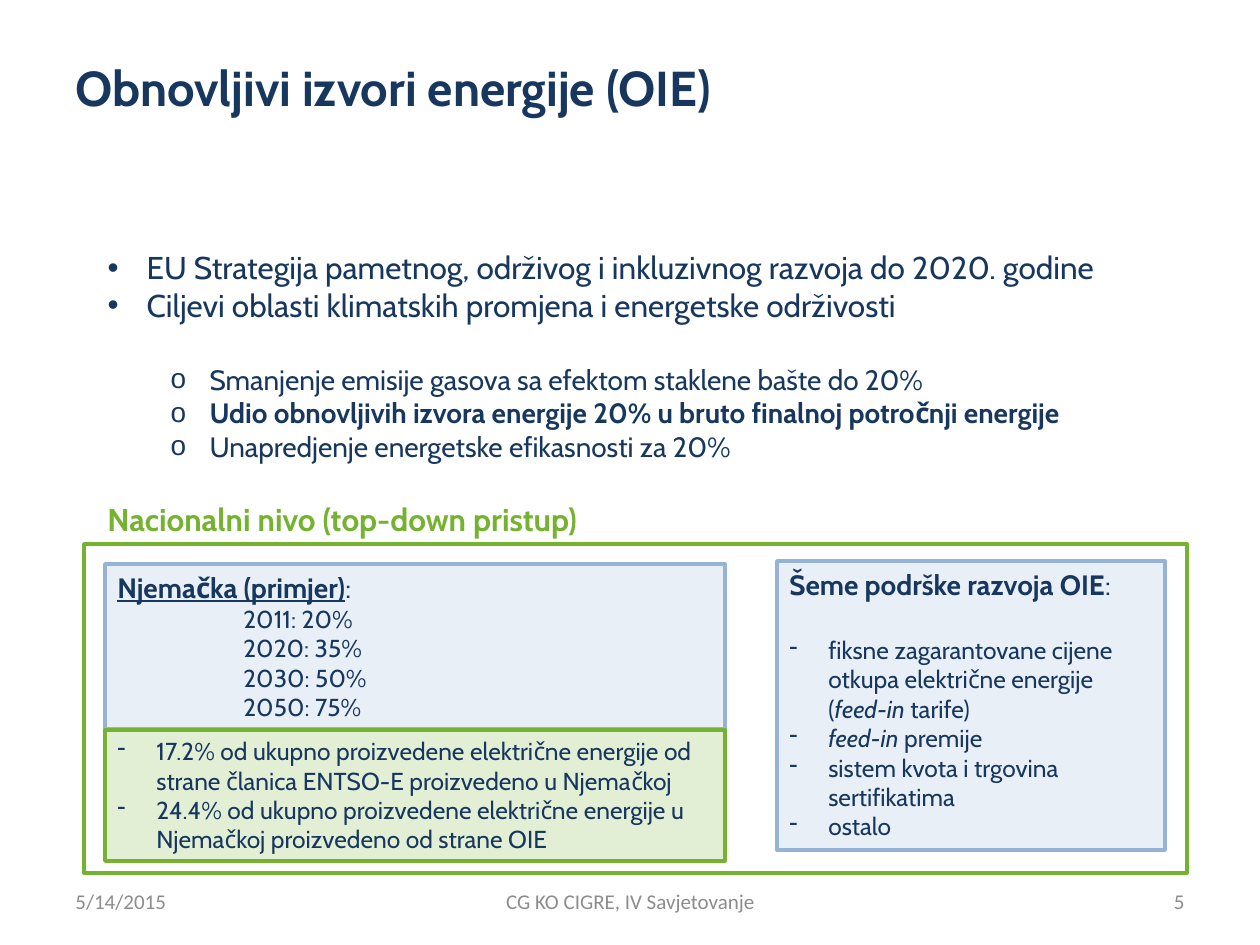
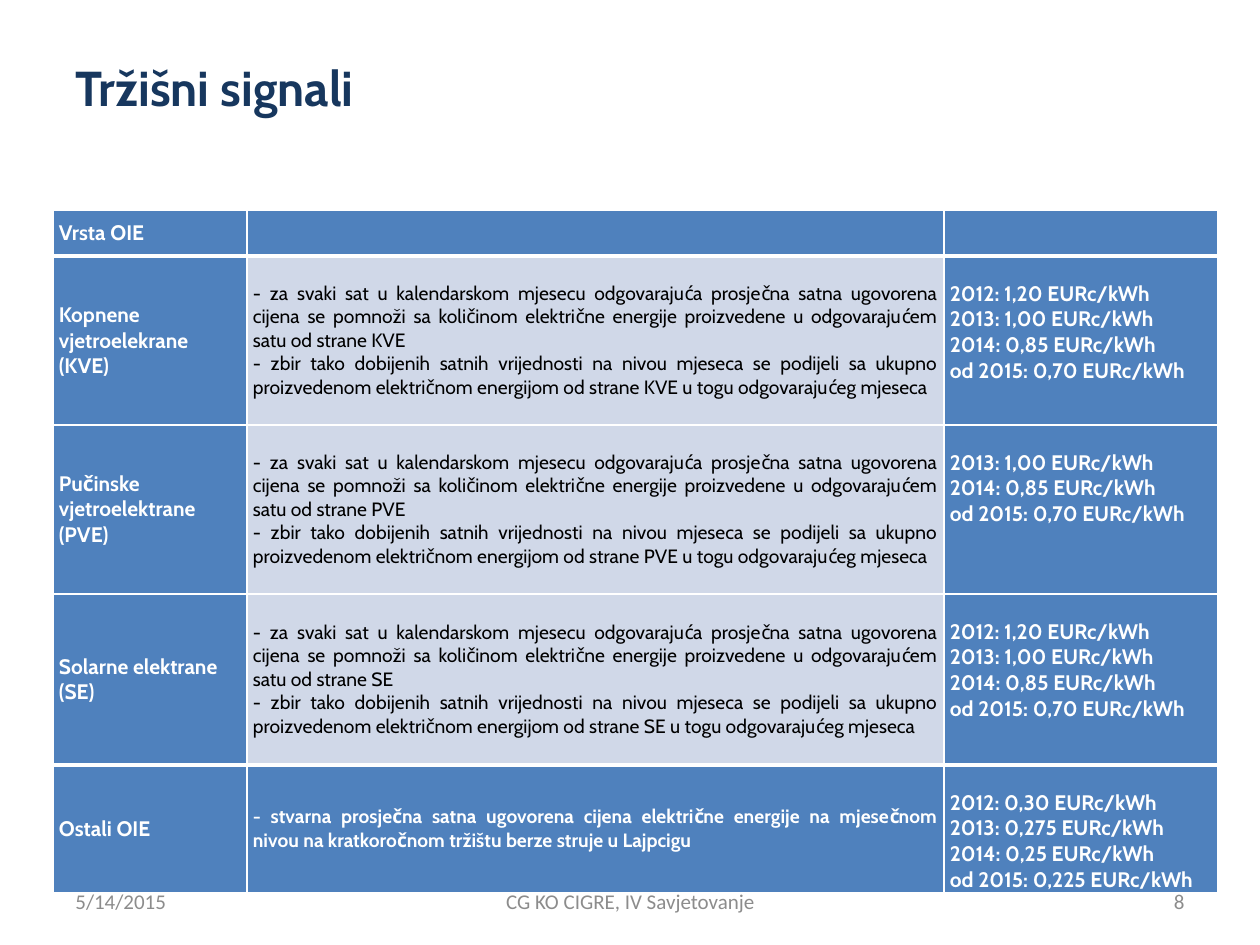
import dataclasses

import lxml.etree
import pptx
import pptx.dml.color
import pptx.enum.shapes
import pptx.enum.text
import pptx.oxml.ns
import pptx.util

ALIGN = pptx.enum.text.PP_ALIGN
ANCHOR = pptx.enum.text.MSO_ANCHOR
qn = pptx.oxml.ns.qn


@dataclasses.dataclass(frozen=True)
class Theme:
    """Colours, fonts and type sizes of the deck."""
    navy: str = "17375E"
    green: str = "74B230"
    sky: str = "95B3D7"
    blue: str = "4F81BD"
    pale: str = "D0D8E8"
    white: str = "FFFFFF"
    black: str = "000000"
    grey: str = "8C8C8C"
    font: str = "Cabin"
    footer_font: str = "Calibri"
    title: int = 28
    lead: int = 18
    sub: int = 16
    detail: int = 14
    small: int = 12
    tiny: int = 11


THEME = Theme()
HANG = 39


def px(length):
    """Turn a length in px into EMU."""
    return pptx.util.Emu(round(length * 914400 / 126))


def within(box, left, top, width, height):
    """Shift a box by the corner of the box that holds it."""
    return box[0] + left, box[1] + top, width, height


def rgb(color):
    """Turn a hex string into a colour."""
    return pptx.dml.color.RGBColor.from_string(color)


def write(frame, text, size=THEME.detail, color=THEME.navy, font=THEME.font, bold=False,
          align=ALIGN.LEFT, bullet=None, indent=0, before=0, level=0):
    """Add a paragraph of plain text or of (text, font settings) runs."""
    first = frame.paragraphs[0]
    paragraph = frame.add_paragraph() if first.runs else first
    paragraph.level = level
    paragraph.alignment = align
    paragraph.space_before = pptx.util.Pt(before)
    properties = paragraph._p.get_or_add_pPr()
    properties.set("marL", str(px(indent)))
    properties.set("indent", str(-px(HANG) if bullet else 0))
    if bullet:
        lxml.etree.SubElement(properties, qn("a:buChar"), char=bullet)
    for words, settings in [(text, {})] if isinstance(text, str) else text:
        run = paragraph.add_run()
        run.text = words
        run.font.name = font
        run.font.size = pptx.util.Pt(size)
        run.font.bold = bold
        run.font.color.rgb = rgb(color)
        for name, value in settings.items():
            setattr(run.font, name, value)


def prepare(frame, anchor=ANCHOR.TOP):
    """Make a text frame wrap at a fixed size."""
    frame.word_wrap = True
    frame.auto_size = pptx.enum.text.MSO_AUTO_SIZE.NONE
    frame.vertical_anchor = anchor
    return frame


def place(placeholder, box):
    """Move a placeholder to a box."""
    placeholder.left, placeholder.top, placeholder.width, placeholder.height = map(px, box)


def label(slide, box, text, anchor=ANCHOR.TOP, **style):
    """Add a text box with one paragraph."""
    frame = prepare(slide.shapes.add_textbox(*map(px, box)).text_frame, anchor)
    write(frame, text, **style)


def panel(slide, box, line, fill=None):
    """Add an outlined rectangle with an optional light tint and return its text frame."""
    shape = slide.shapes.add_shape(pptx.enum.shapes.MSO_SHAPE.RECTANGLE, *map(px, box))
    shape.shadow.inherit = False
    shape.line.color.rgb = rgb(line)
    shape.line.width = pptx.util.Pt(2)
    if fill:
        shape.fill.solid()
        shape.fill.fore_color.rgb = rgb(fill)
        tint = shape._element.spPr.find(qn("a:solidFill")).find(qn("a:srgbClr"))
        lxml.etree.SubElement(tint, qn("a:alpha"), val="20000")
    else:
        shape.fill.background()
    return prepare(shape.text_frame)


def start_slide(deck, layout, heading, number):
    """Add a slide with its title and footer."""
    slide = deck.slides.add_slide(deck.slide_layouts[layout])
    place(slide.shapes.title, (63, 38, 1134, 158))
    frame = prepare(slide.shapes.title.text_frame, ANCHOR.MIDDLE)
    frame.margin_bottom = px(66)
    write(frame, heading, size=THEME.title, bold=True)
    for left, width, text, align in (
        (63, 294, "5/14/2015", ALIGN.LEFT),
        (431, 399, "CG KO CIGRE, IV Savjetovanje", ALIGN.CENTER),
        (903, 294, str(number), ALIGN.RIGHT),
    ):
        label(slide, (left, 876, width, 50), text, ANCHOR.MIDDLE, size=THEME.small,
              color=THEME.grey, font=THEME.footer_font, align=align)
    return slide


def strategy_list(slide, box):
    """Fill the body placeholder with the EU goals."""
    body = slide.placeholders[1]
    place(body, box)
    frame = prepare(body.text_frame)
    for goal in (
        "EU Strategija pametnog, održivog i inkluzivnog razvoja do 2020. godine",
        "Ciljevi oblasti klimatskih promjena i energetske održivosti",
    ):
        write(frame, goal, size=THEME.lead, bullet="•", indent=HANG)
    for target, bold, before in (
        ("Smanjenje emisije gasova sa efektom staklene bašte do 20%", False, 22),
        ("Udio obnovljivih izvora energije 20% u bruto finalnoj potročnji energije", True, 0),
        ("Unapredjenje energetske efikasnosti za 20%", False, 0),
    ):
        write(frame, target, size=THEME.sub, bold=bold, bullet="o", indent=102,
              before=before, level=1)


def national_level(slide, box):
    """Draw the national frame with the German example and the support schemes."""
    panel(slide, box, THEME.green)

    germany = panel(slide, within(box, 21, 20, 620, 165), THEME.sky, THEME.sky)
    write(germany, [("Njemačka (primjer)", {"bold": True, "underline": True}), (":", {})],
          size=THEME.sub)
    for year, share in ((2011, 20), (2020, 35), (2030, 50), (2050, 75)):
        write(germany, f"{year}: {share}%", indent=126)

    schemes = panel(slide, within(box, 693, 17, 388, 289), THEME.sky, THEME.sky)
    write(schemes, [("Šeme podrške razvoja OIE", {"bold": True}), (":", {})], size=THEME.sub)
    feed_in = ("feed-in", {"italic": True})
    for position, scheme in enumerate((
        [("fiksne zagarantovane cijene otkupa električne energije (", {}), feed_in,
         (" tarife)", {})],
        [feed_in, (" premije", {})],
        "sistem kvota i trgovina sertifikatima",
        "ostalo",
    )):
        write(schemes, scheme, bullet="-", indent=HANG, before=0 if position else 19.5)

    label(slide, within(box, 11, -50, 504, 50), "Nacionalni nivo (top-down pristup)",
          size=THEME.lead, color=THEME.green, bold=True)

    shares = panel(slide, within(box, 21, 186, 620, 131), THEME.green, THEME.green)
    for fact in (
        "17.2% od ukupno proizvedene električne energije od strane članica ENTSO-E "
        "proizvedeno u Njemačkoj",
        "24.4% od ukupno proizvedene električne energije u Njemačkoj proizvedeno od strane OIE",
    ):
        write(shares, fact, bullet="-", indent=HANG)


def finish_cell(cell, fill, top, bottom):
    """Set the fill, margins and white borders of a cell."""
    cell.fill.solid()
    cell.fill.fore_color.rgb = rgb(fill)
    cell.vertical_anchor = ANCHOR.MIDDLE
    cell.margin_left = cell.margin_right = px(6)
    cell.margin_top = cell.margin_bottom = 0
    properties = cell._tc.get_or_add_tcPr()
    for position, (side, width) in enumerate(
            (("lnL", 1), ("lnR", 1), ("lnT", top), ("lnB", bottom))):
        border = lxml.etree.Element(qn(f"a:{side}"), w=str(pptx.util.Pt(width)))
        paint = lxml.etree.SubElement(border, qn("a:solidFill"))
        lxml.etree.SubElement(paint, qn("a:srgbClr"), val=THEME.white)
        properties.insert(position, border)


def monthly_rule(source):
    """Return the two steps of the monthly price for a source."""
    return (
        "- za svaki sat u kalendarskom mjesecu odgovarajuća prosječna satna ugovorena cijena "
        "se pomnoži sa količinom električne energije proizvedene u odgovarajućem satu "
        f"od strane {source}",
        "- zbir tako dobijenih satnih vrijednosti na nivou mjeseca se podijeli sa ukupno "
        f"proizvedenom električnom energijom od strane {source} u togu odgovarajućeg mjeseca",
    )


def premium_table(slide, box):
    """Draw the table of market signals by type of source."""
    premiums = ("2012: 1,20", "2013: 1,00", "2014: 0,85", "od 2015: 0,70")
    records = (
        ("Vrsta OIE", (), ()),
        ("Kopnene vjetroelekrane (KVE)", monthly_rule("KVE"), premiums),
        ("Pučinske vjetroelektrane (PVE)", monthly_rule("PVE"), premiums[1:]),
        ("Solarne elektrane (SE)", monthly_rule("SE"), premiums),
        ("Ostali OIE",
         ("- stvarna prosječna satna ugovorena cijena električne energije na mjesečnom nivou "
          "na kratkoročnom tržištu berze struje u Lajpcigu",),
         ("2012: 0,30", "2013: 0,275", "2014: 0,25", "od 2015: 0,225")),
    )
    last = len(records) - 1
    table = slide.shapes.add_table(len(records), 3, *map(px, box)).table
    table.horz_banding = False
    for column, width in zip(table.columns, (194, 697, 274)):
        column.width = px(width)
    for row, height in zip(table.rows, (46, 169, 169, 171, 127)):
        row.height = px(height)

    for index, (source, rules, prices) in enumerate(records):
        plain = 0 < index < last
        cells = [table.cell(index, column) for column in range(3)]
        for cell, fill in zip(cells, (THEME.blue, THEME.pale if plain else THEME.blue, THEME.blue)):
            finish_cell(cell, fill, 3 if index in (1, last) else 1,
                        3 if index in (0, last - 1) else 1)
        source_cell, rule_cell, price_cell = cells
        write(source_cell.text_frame, source, size=THEME.small, color=THEME.white, bold=True)
        for rule in rules:
            write(rule_cell.text_frame, rule, size=THEME.tiny, bold=not plain,
                  color=THEME.black if plain else THEME.white, align=ALIGN.JUSTIFY)
        if prices:
            price_cell.vertical_anchor = ANCHOR.TOP
            price_cell.margin_top = px(25)
        for price in prices:
            write(price_cell.text_frame, f"{price} EURc/kWh", size=THEME.small,
                  color=THEME.white, bold=True)


def main():
    """Build and save the deck."""
    deck = pptx.Presentation()
    deck.slide_width, deck.slide_height = px(1260), px(945)

    renewables = start_slide(deck, 1, "Obnovljivi izvori energije (OIE)", 5)
    strategy_list(renewables, (95, 242, 1124, 229))
    national_level(renewables, (84, 544, 1103, 329))

    signals = start_slide(deck, 5, "Tržišni signali", 8)
    premium_table(signals, (53, 210, 1165, 682))

    deck.save("out.pptx")


if __name__ == "__main__":
    main()
